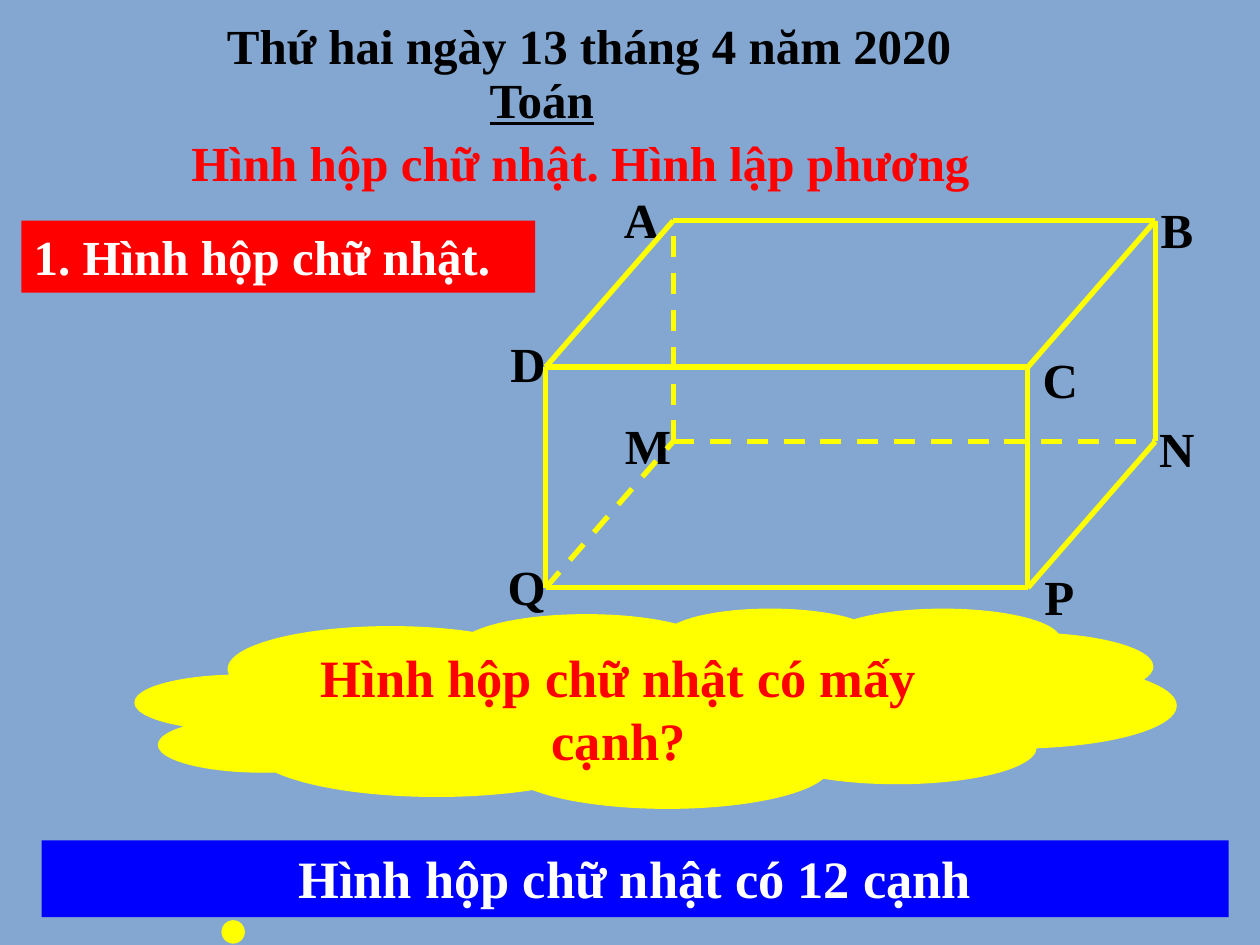
from pptx import Presentation
from pptx.dml.color import RGBColor
from pptx.enum.dml import MSO_LINE as Dash
from pptx.enum.shapes import MSO_CONNECTOR as Link, MSO_SHAPE as Form
from pptx.enum.text import MSO_ANCHOR as Anchor, PP_ALIGN as Align
from pptx.oxml.ns import qn
from pptx.util import Cm, Pt
from lxml.etree import SubElement

HUES = {"back": "84A7D1", "ink": "000000", "red": "FF0000",
        "blue": "0000FF", "gold": "FFFF00", "white": "FFFFFF"}
FONT = "Times New Roman"
ROW = 1.45


def hue(name):
    """Return the named colour."""
    return RGBColor.from_string(HUES[name])


def write(shape, text, tint="ink", size=28, align=Align.CENTER, under=None):
    """Put one bold line of text into a shape."""
    frame = shape.text_frame
    frame.word_wrap = True
    frame.vertical_anchor = Anchor.TOP
    para = frame.paragraphs[0]
    para.text = text
    para.alignment = align
    font = para.runs[0].font
    font.name, font.size, font.bold = FONT, Pt(size), True
    font.underline = under
    font.color.rgb = hue(tint)


def label(slide, box, text, **style):
    """Add a text box."""
    write(slide.shapes.add_textbox(*map(Cm, box)), text, **style)


def panel(slide, box, fill, text, form=Form.RECTANGLE, **style):
    """Add a filled shape with text and return it."""
    shape = slide.shapes.add_shape(form, *map(Cm, box))
    shape.shadow.inherit = False
    shape.fill.solid()
    shape.fill.fore_color.rgb = hue(fill)
    shape.line.fill.background()
    write(shape, text, **style)
    return shape


def edge(slide, start, end, dashed):
    """Draw one edge of the solid."""
    line = slide.shapes.add_connector(Link.STRAIGHT, *map(Cm, start + end))
    line.line.color.rgb = hue("gold")
    line.line.width = Pt(3)
    if dashed:
        line.line.dash_style = Dash.DASH
    SubElement(line._element.spPr, qn("a:effectLst"))


def head(slide, box):
    """Place the date, subject and lesson title."""
    left, top, wide = box
    label(slide, (left + 6.98, top + 1.09, 3.1, ROW), "Toán", under=True)
    label(slide, (left + 1.22, top + 2.36, 17.07, ROW),
          "Hình hộp chữ nhật. Hình lập phương", tint="red", align=Align.LEFT)
    label(slide, (left, top, wide, ROW), "Thứ hai ngày 13 tháng 4 năm 2020")


def solid(slide, box):
    """Draw the lettered rectangular solid in oblique view."""
    left, top, wide, high = box
    dx, dy = 2.57, 2.95
    drop = high - dy
    face = {"A": (dx, 0), "B": (wide, 0), "C": (wide - dx, dy), "D": (0, dy)}
    dots = {}
    for (name, (x, y)), low in zip(face.items(), "MNPQ"):
        dots[name] = (left + x, top + y)
        dots[low] = (left + x, top + y + drop)
    shifts = {"A": (-1.27, -0.76), "B": (-0.2, -0.56), "C": (0.02, -0.48),
              "N": (-0.2, -0.58), "P": (0, -0.56), "M": (-1.22, -0.64),
              "D": (-0.99, -0.81), "Q": (-1.02, -0.75)}
    for name, (x, y) in shifts.items():
        label(slide, (dots[name][0] + x, dots[name][1] + y, 1.27, ROW), name)
    for pair in "QP DC DQ CP AB AD BC MN MA QM PN BN".split():
        edge(slide, dots[pair[0]], dots[pair[1]], "M" in pair)


def cloud(slide, box):
    """Place the question cloud."""
    shape = panel(slide, box, "gold", "Hình hộp chữ nhật có mấy cạnh?",
                  Form.CLOUD_CALLOUT, tint="red", size=30)
    shape.line.color.rgb = hue("gold")
    shape.line.width = Pt(0.75)
    shape.adjustments[0], shape.adjustments[1] = -0.52, 1.44


def main():
    """Build and save the slide."""
    deck = Presentation()
    deck.slide_width, deck.slide_height = Cm(25.4), Cm(19.05)
    slide = deck.slides.add_slide(deck.slide_layouts[6])
    fill = slide.background.fill
    fill.solid()
    fill.fore_color.rgb = hue("back")
    solid(slide, (11, 4.45, 12.29, 7.4))
    cloud(slide, (2.74, 12.27, 20.96, 4.01))
    panel(slide, (0.84, 16.94, 23.93, 1.55), "blue",
          "Hình hộp chữ nhật có 12 cạnh", tint="white", size=30)
    head(slide, (2.39, 0.18, 18.97))
    panel(slide, (0.43, 4.45, 10.36, ROW), "red", "1. Hình hộp chữ nhật.",
          tint="white", align=Align.LEFT)
    deck.save("out.pptx")


if __name__ == "__main__":
    main()
